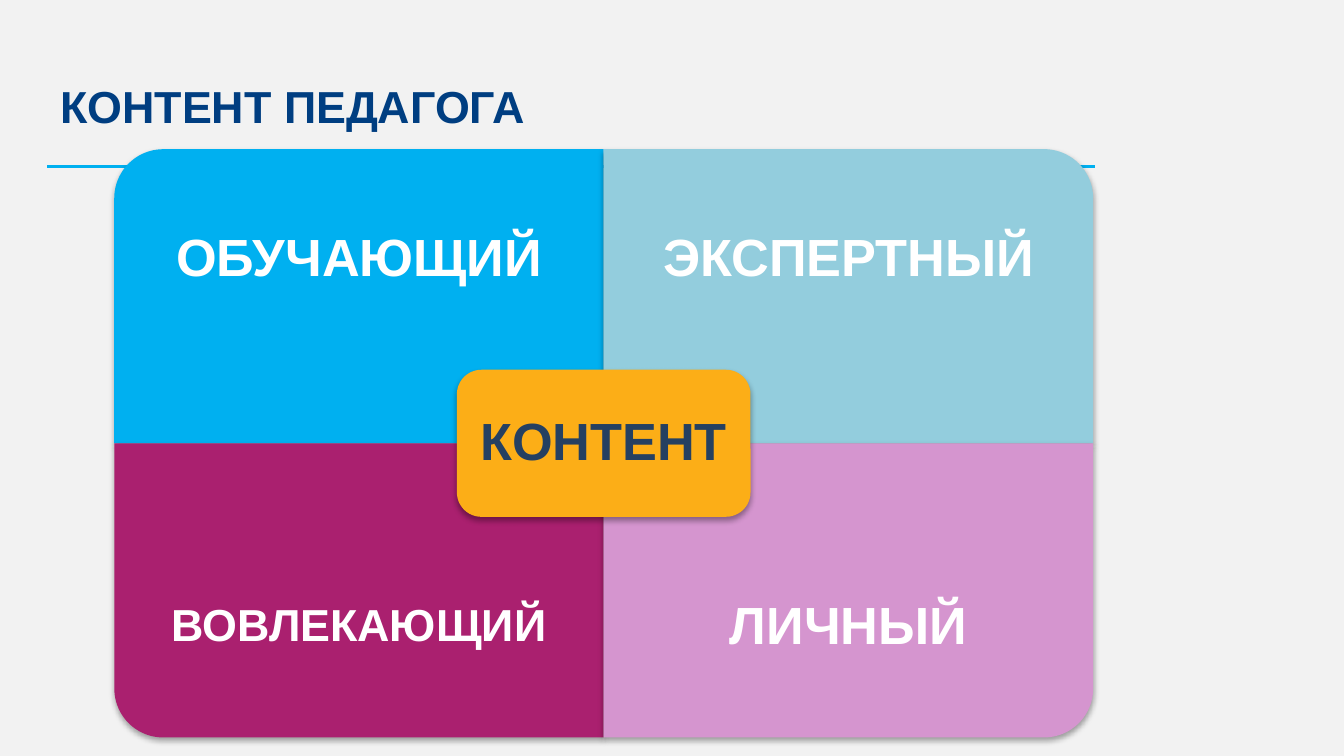
from pptx import Presentation
from pptx.dml.color import RGBColor
from pptx.enum.shapes import MSO_CONNECTOR, MSO_SHAPE
from pptx.enum.text import MSO_ANCHOR, PP_ALIGN
from pptx.oxml import parse_xml
from pptx.oxml.ns import nsdecls
from pptx.util import Cm, Pt

SHADOW = (
    f'<a:outerShdw {nsdecls("a")} blurRad="40000" dist="23000" dir="5400000" rotWithShape="0">'
    '<a:srgbClr val="000000"><a:alpha val="35000"/></a:srgbClr></a:outerShdw>'
)


def color(code):
    return RGBColor.from_string(code)


def write(frame, text, size=28, ink="FFFFFF", align=PP_ALIGN.CENTER, space=0.9, side=0.56, edge=0.56):
    frame.word_wrap = True
    frame.vertical_anchor = MSO_ANCHOR.MIDDLE
    frame.margin_left = frame.margin_right = Cm(side)
    frame.margin_top = frame.margin_bottom = Cm(edge)
    para = frame.paragraphs[0]
    para.alignment = align
    para.line_spacing = space
    run = para.add_run()
    run.text = text
    font = run.font
    font.name, font.size, font.bold = "Arial", Pt(size), True
    font.color.rgb = color(ink)


class Deck:
    def __init__(self, width, height, back):
        self.show = Presentation()
        self.show.slide_width, self.show.slide_height = Cm(width), Cm(height)
        self.slide = self.show.slides.add_slide(self.show.slide_layouts[6])
        fill = self.slide.background.fill
        fill.solid()
        fill.fore_color.rgb = color(back)

    def label(self, text, left, top, width, height, **style):
        box = self.slide.shapes.add_textbox(Cm(left), Cm(top), Cm(width), Cm(height))
        write(box.text_frame, text, **style)

    def panel(self, kind, left, top, width, height, fill, turn=0):
        if turn % 180:
            left += (width - height) / 2
            top += (height - width) / 2
            width, height = height, width
        shape = self.slide.shapes.add_shape(kind, Cm(left), Cm(top), Cm(width), Cm(height))
        shape.rotation = turn
        shape.fill.solid()
        shape.fill.fore_color.rgb = color(fill)
        shape.line.fill.background()
        shape.shadow.inherit = False
        shape._element.spPr.find("{*}effectLst").append(parse_xml(SHADOW))
        return shape

    def rule(self, left, right, top, ink, weight):
        line = self.slide.shapes.add_connector(
            MSO_CONNECTOR.STRAIGHT, Cm(left), Cm(top), Cm(right), Cm(top))
        line.line.color.rgb = color(ink)
        line.line.width = Pt(weight)
        line._element.spPr.append(parse_xml(f'<a:effectLst {nsdecls("a")}/>'))


def main():
    deck = Deck(25.4, 14.29, "F2F2F2")
    deck.rule(0.89, 20.7, 3.15, "00B0F0", 1.5)
    deck.label("КОНТЕНТ ПЕДАГОГА", 0.89, 0.84, 19.81, 2.31, size=24, ink="003E81",
               align=PP_ALIGN.LEFT, space=1, side=0.25, edge=0.13)

    left, top, width, height = 2.16, 2.82, 9.25, 5.56
    depth = height * 0.75
    parts = [
        ("ОБУЧАЮЩИЙ", 0, 0, "00B0F0", 270, 28),
        ("ЭКСПЕРТНЫЙ", 1, 0, "93CDDD", 0, 28),
        ("ВОВЛЕКАЮЩИЙ", 0, 1, "AA206F", 180, 24),
        ("ЛИЧНЫЙ", 1, 1, "D595CF", 90, 28),
    ]
    for text, col, row, fill, turn, size in parts:
        x, y = left + col * width, top + row * height
        deck.panel(MSO_SHAPE.ROUND_1_RECTANGLE, x, y, width, height, fill, turn)
        deck.label(text, x, y + row * (height - depth), width, depth, size=size)

    wide, high = width * 0.6, height / 2
    core = deck.panel(MSO_SHAPE.ROUNDED_RECTANGLE, left + width - wide / 2,
                      top + height - high / 2, wide, high, "FCAE17")
    write(core.text_frame, "КОНТЕНТ", ink="254061", side=0.3, edge=0.3)
    deck.show.save("out.pptx")


if __name__ == "__main__":
    main()
